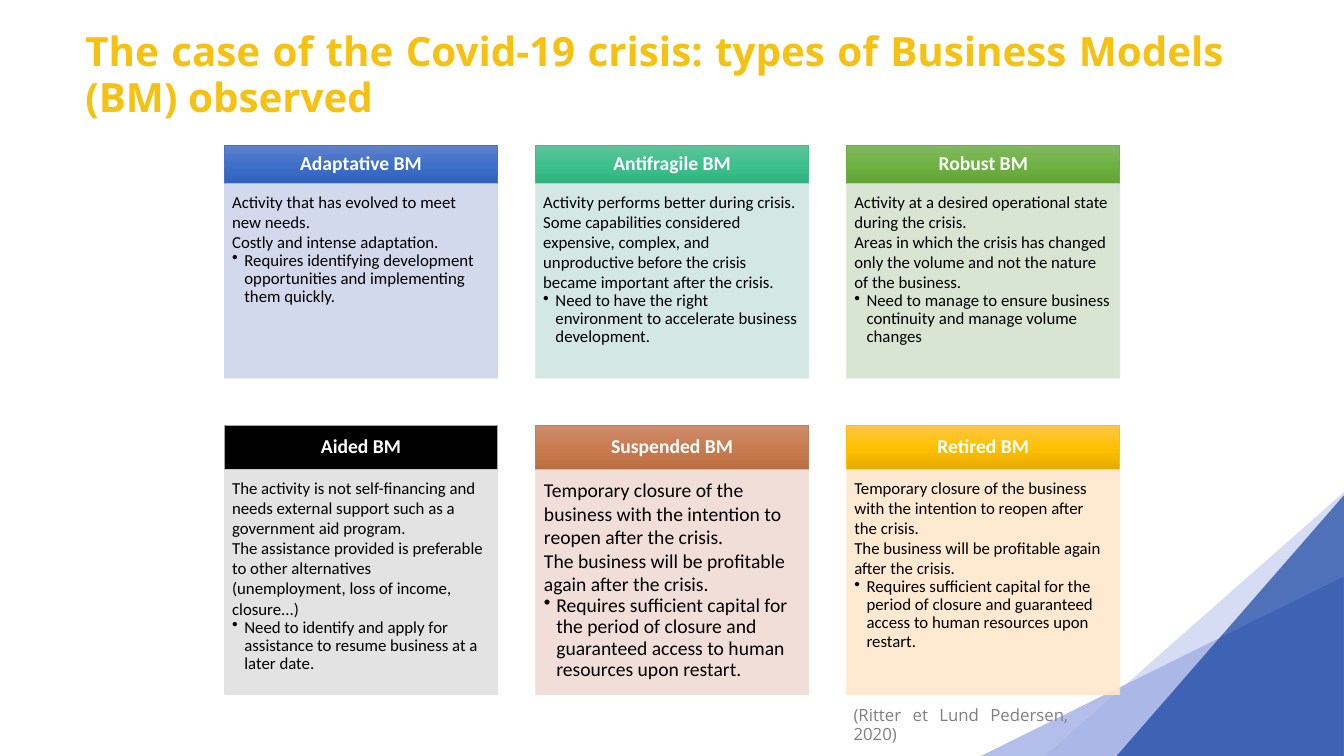
from dataclasses import dataclass

from lxml.etree import SubElement
from pptx import Presentation
from pptx.dml.color import RGBColor
from pptx.dml.fill import FillFormat
from pptx.enum.shapes import MSO_SHAPE as Preset
from pptx.enum.text import MSO_ANCHOR as Anchor, MSO_AUTO_SIZE as AutoSize, PP_ALIGN as Align
from pptx.oxml.ns import qn
from pptx.shapes.autoshape import Shape
from pptx.slide import Slide
from pptx.text.text import TextFrame
from pptx.util import Cm, Pt

WHITE = RGBColor(0xFF, 0xFF, 0xFF)
BLACK = RGBColor(0x00, 0x00, 0x00)
GREY = RGBColor(0x80, 0x80, 0x80)
SILVER = RGBColor(0xA5, 0xA5, 0xA5)
GOLD = RGBColor(0xF7, 0xC1, 0x11)
PALE_BLUE = RGBColor(0xC5, 0xCE, 0xEF)
SOFT_BLUE = RGBColor(0x9F, 0xAE, 0xE5)
DEEP_BLUE = RGBColor(0x00, 0x33, 0x99)
BLUE = RGBColor(0x44, 0x72, 0xC4)
BLUE_SHADES = (RGBColor(0x61, 0x83, 0xCB), RGBColor(0x3E, 0x70, 0xCA), RGBColor(0x30, 0x62, 0xBB))
BLUE_TINT = RGBColor(0xCF, 0xD5, 0xEA)
TEAL = RGBColor(0x43, 0xBB, 0x8D)
TEAL_SHADES = (RGBColor(0x60, 0xC3, 0x9A), RGBColor(0x3D, 0xC1, 0x8F), RGBColor(0x31, 0xB0, 0x80))
TEAL_TINT = RGBColor(0xCF, 0xE6, 0xE0)
GREEN = RGBColor(0x70, 0xAD, 0x47)
GREEN_SHADES = (RGBColor(0x81, 0xB8, 0x61), RGBColor(0x6F, 0xB2, 0x42), RGBColor(0x62, 0xA3, 0x36))
GREEN_TINT = RGBColor(0xD5, 0xE3, 0xCF)
GREY_TINT = RGBColor(0xE1, 0xE1, 0xE1)
BROWN = RGBColor(0xC5, 0x7C, 0x53)
BROWN_SHADES = (RGBColor(0xCD, 0x8D, 0x6E), RGBColor(0xCA, 0x7C, 0x50), RGBColor(0xB9, 0x6E, 0x42))
BROWN_TINT = RGBColor(0xF1, 0xDB, 0xD5)
AMBER = RGBColor(0xFF, 0xC0, 0x00)
AMBER_SHADES = (RGBColor(0xFF, 0xC7, 0x46), RGBColor(0xFF, 0xC0, 0x00), RGBColor(0xE5, 0xAC, 0x00))
AMBER_TINT = RGBColor(0xFF, 0xE7, 0xCB)


@dataclass(frozen=True)
class Triangle:
    left: float
    top: float
    width: float
    height: float
    colour: RGBColor
    opacity: int


@dataclass(frozen=True)
class Row:
    top: float
    header_height: float
    body_height: float


@dataclass(frozen=True)
class Card:
    name: str
    shades: tuple[RGBColor, ...]
    edge: RGBColor
    tint: RGBColor
    statements: tuple[str, ...]
    need: str
    size: int = 12


TRIANGLES = (
    Triangle(26.77, 11.96, 6.65, 7.54, PALE_BLUE, 71),
    Triangle(27.03, 12.22, 4.52, 9.14, SOFT_BLUE, 79),
    Triangle(27.71, 12.9, 6.58, 5.74, DEEP_BLUE, 63),
)
ROWS = (Row(3.66, 0.97, 4.9), Row(10.72, 1.12, 5.66))
FIRST_LEFT, COLUMN_PITCH, CARD_WIDTH = 5.66, 7.84, 6.88
COLUMNS = 3
CLOSURE = (
    "Temporary closure of the business with the intention to reopen after the crisis.",
    "The business will be profitable again after the crisis.",
)
CAPITAL = ("Requires sufficient capital for the period of closure and guaranteed "
           "access to human resources upon restart.")
CARDS = (
    Card("Adaptative BM", BLUE_SHADES, BLUE, BLUE_TINT,
         ("Activity that has evolved to meet new needs.", "Costly and intense adaptation."),
         "Requires identifying development opportunities and implementing them quickly."),
    Card("Antifragile BM", TEAL_SHADES, TEAL, TEAL_TINT,
         ("Activity performs better during crisis.",
          "Some capabilities considered expensive, complex, and unproductive before "
          "the crisis became important after the crisis."),
         "Need to have the right environment to accelerate business development."),
    Card("Robust BM", GREEN_SHADES, GREEN, GREEN_TINT,
         ("Activity at a desired operational state during the crisis.",
          "Areas in which the crisis has changed only the volume and not the nature "
          "of the business."),
         "Need to manage to ensure business continuity and manage volume changes"),
    Card("Aided BM", (BLACK,), SILVER, GREY_TINT,
         ("The activity is not self-financing and needs external support such as a "
          "government aid program.",
          "The assistance provided is preferable to other alternatives "
          "(unemployment, loss of income, closure...)"),
         "Need to identify and apply for assistance to resume business at a later date."),
    Card("Suspended BM", BROWN_SHADES, BROWN, BROWN_TINT, CLOSURE, CAPITAL, 14),
    Card("Retired BM", AMBER_SHADES, AMBER, AMBER_TINT, CLOSURE, CAPITAL),
)


def paint(fill: FillFormat, colour: RGBColor, opacity: int = 100) -> None:
    fill.solid()
    fill.fore_color.rgb = colour
    if opacity < 100:
        value = fill._xPr.find(f".//{qn('a:srgbClr')}")
        SubElement(value, qn("a:alpha"), val=str(opacity * 1000))


def shade(shape: Shape, shades: tuple[RGBColor, ...]) -> None:
    shape.fill.gradient()
    shape.fill.gradient_angle = 270
    stops = shape._element.spPr.find(f".//{qn('a:gsLst')}")
    stops.clear()
    for index, colour in enumerate(shades):
        stop = SubElement(stops, qn("a:gs"), pos=str(index * 100000 // (len(shades) - 1)))
        SubElement(stop, qn("a:srgbClr"), val=str(colour))


def add_plain_shape(page: Slide, preset: Preset, left: float, top: float,
                    width: float, height: float) -> Shape:
    shape = page.shapes.add_shape(preset, Cm(left), Cm(top), Cm(width), Cm(height))
    shape.shadow.inherit = False
    return shape


def set_frame(frame: TextFrame, anchor: Anchor, insets: tuple[float, ...]) -> None:
    frame.word_wrap = True
    frame.auto_size = AutoSize.NONE
    frame.vertical_anchor = anchor
    frame.margin_left, frame.margin_top, frame.margin_right, frame.margin_bottom = map(Cm, insets)


def write(frame: TextFrame, text: str, size: float, colour: RGBColor, align: Align,
          spacing: float, font: str = "Calibri", bold: bool = False,
          first: bool = True, bullet: bool = False) -> None:
    para = frame.paragraphs[0] if first else frame.add_paragraph()
    if bullet:
        properties = para._p.get_or_add_pPr()
        properties.set("marL", str(Cm(0.31)))
        properties.set("indent", str(-Cm(0.31)))
        SubElement(properties, qn("a:buChar"), char="•")
    para.alignment = align
    para.line_spacing = spacing
    span = para.add_run()
    span.text = text
    span.font.name = font
    span.font.size = Pt(size)
    span.font.bold = bold
    span.font.color.rgb = colour


def draw_triangle(page: Slide, item: Triangle) -> None:
    shape = add_plain_shape(page, Preset.ISOSCELES_TRIANGLE,
                            item.left, item.top, item.width, item.height)
    shape.adjustments[0] = 0
    shape.rotation = 270
    paint(shape.fill, item.colour, item.opacity)
    shape.line.fill.background()


def draw_card(page: Slide, card: Card, row: Row, left: float) -> None:
    header = add_plain_shape(page, Preset.RECTANGLE, left, row.top, CARD_WIDTH, row.header_height)
    if len(card.shades) > 1:
        shade(header, card.shades)
    else:
        paint(header.fill, card.shades[0])
    paint(header.line.fill, card.edge)
    header.line.width = Pt(0.5)
    set_frame(header.text_frame, Anchor.MIDDLE, (0.28, 0.15, 0.28, 0.15))
    write(header.text_frame, card.name, 14, WHITE, Align.CENTER, 0.9, bold=True)

    body = add_plain_shape(page, Preset.RECTANGLE, left, row.top + row.header_height,
                           CARD_WIDTH, row.body_height)
    paint(body.fill, card.tint, 90)
    paint(body.line.fill, card.tint, 90)
    body.line.width = Pt(0.5)
    insets = (0.19, 0.19, 0.24, 0.25) if card.size == 12 else (0.21, 0.21, 0.28, 0.3)
    set_frame(body.text_frame, Anchor.TOP, insets)
    for index, statement in enumerate(card.statements):
        write(body.text_frame, statement, card.size, BLACK, Align.LEFT, 1.0, first=index == 0)
    write(body.text_frame, card.need, card.size, BLACK, Align.LEFT, 0.9, first=False, bullet=True)


def main() -> None:
    deck = Presentation()
    deck.slide_width, deck.slide_height = Cm(33.87), Cm(19.05)
    page = deck.slides.add_slide(deck.slide_layouts[5])
    for triangle in TRIANGLES:
        draw_triangle(page, triangle)

    title = page.shapes.title
    title.left, title.top, title.width, title.height = Cm(1.9), Cm(0.48), Cm(29.21), Cm(2.87)
    set_frame(title.text_frame, Anchor.MIDDLE, (0.25, 0.13, 0.25, 0.13))
    write(title.text_frame, "The case of the Covid-19 crisis: types of Business Models (BM) observed",
          28.8, GOLD, Align.JUSTIFY, 0.95, "Open Sans", True)

    for index, card in enumerate(CARDS):
        row, column = divmod(index, COLUMNS)
        draw_card(page, card, ROWS[row], FIRST_LEFT + column * COLUMN_PITCH)

    citation = page.shapes.add_textbox(Cm(21.26), Cm(17.65), Cm(5.92), Cm(1.4))
    set_frame(citation.text_frame, Anchor.TOP, (0.25, 0.13, 0.25, 0.13))
    write(citation.text_frame, "(Ritter et Lund Pedersen, 2020)", 12, GREY,
          Align.JUSTIFY, 0.97, "Open Sans")
    deck.save("out.pptx")


if __name__ == "__main__":
    main()
